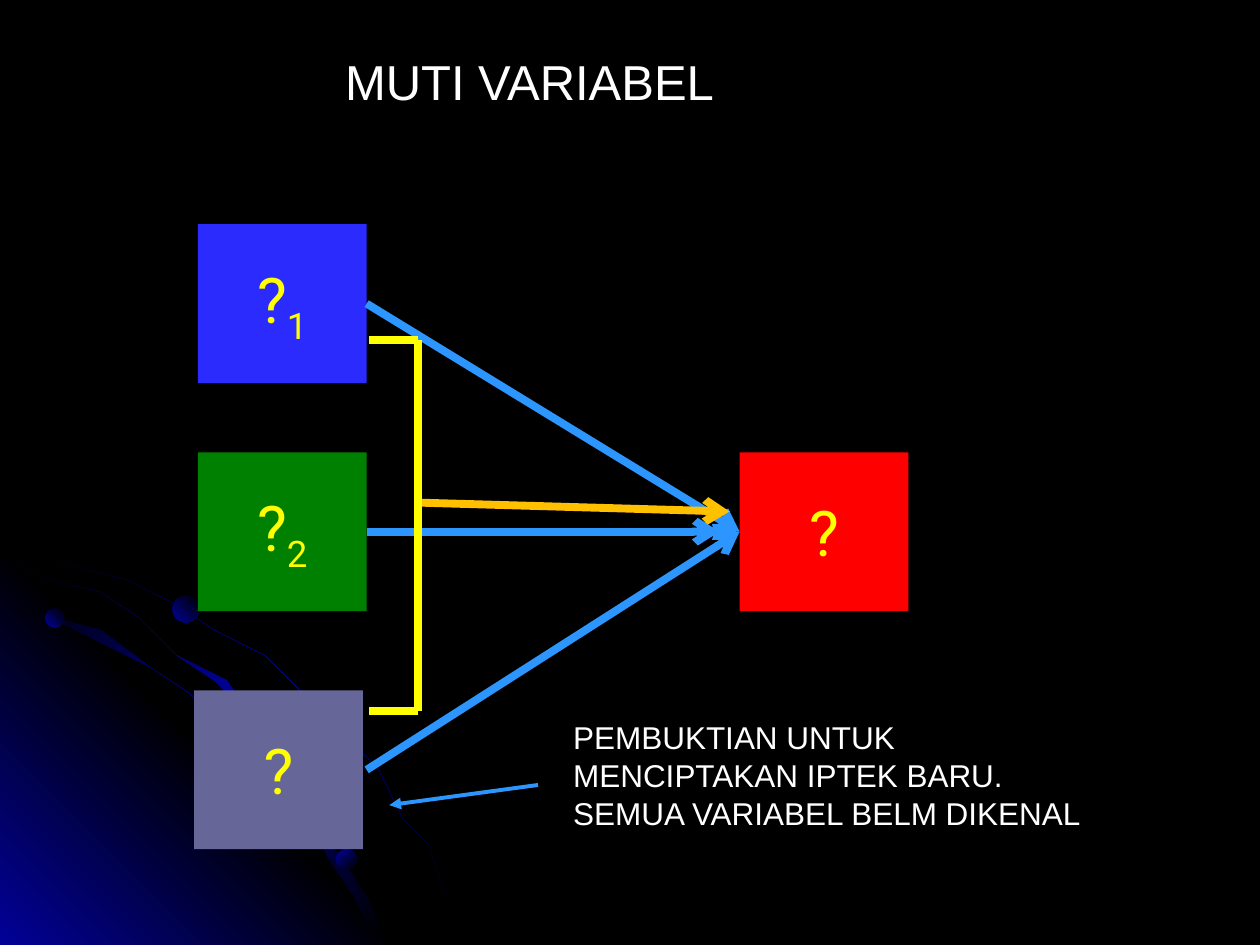
from dataclasses import dataclass

from lxml import etree
from pptx import Presentation, util as u
from pptx.dml.color import RGBColor
from pptx.enum import shapes, text
from pptx.oxml import ns

COLUMNS, ROWS = 100, 75
CELL = u.Inches(0.1)


@dataclass(frozen=True)
class Theme:
    """Colours, fonts and sizes of the slide."""
    night: str = "000000"
    glow: str = "010199"
    first: str = "2B2BFE"
    second: str = "008000"
    other: str = "666699"
    outcome: str = "FF0000"
    effect: str = "2D96FE"
    joint: str = "FFC000"
    mark: str = "FFFF00"
    words: str = "FFFFFF"
    mark_font: str = "Roboto"
    words_font: str = "Arial"
    mark_size: int = 36
    title_size: int = 28
    note_size: int = 18
    thick: float = 4.5
    thin: float = 2.25


THEME = Theme()
BOX_WIDTH, BOX_HEIGHT = 13.4, 12.6

ORBITS = [
    [(0, 43.5), (2.8, 44.1), (5.7, 44.7), (9.8, 45.9), (13.6, 47.7),
     (17.4, 49.7), (20.9, 52.1), (24.2, 54.8), (27.2, 57.8), (30, 61.1),
     (32.5, 64.8), (33.9, 67.3), (35.2, 69.8), (36.2, 72.3), (37.2, 74.9)],
    [(0, 47.5), (4.1, 48.8), (7.9, 50.5), (11.7, 52.6), (15.2, 54.9),
     (18.4, 57.6), (21.5, 60.6), (24.2, 64), (26.6, 67.6), (28.6, 71.2),
     (29.6, 73), (30.3, 74.9)],
    [(0, 44.2), (3.9, 45.5), (7.6, 47.3), (11.1, 49.3), (14.4, 51.6),
     (17.5, 54.3), (20.4, 57.3), (22.9, 60.3), (25.4, 63.9), (26.9, 66.5),
     (28.2, 69.3), (29.4, 72), (30.3, 74.9)],
]


def cells(*counts):
    """Turn counts of grid cells into lengths."""
    return [u.Emu(round(count * CELL)) for count in counts]


def rgb(colour):
    """Read a colour of the theme."""
    return RGBColor.from_string(colour)


def blend(shape, colours, angle):
    """Fill an unlined shape with evenly spaced colours along an angle."""
    shape.shadow.inherit = False
    shape.line.fill.background()
    shape.fill.gradient()
    gradient = shape._element.spPr.find(ns.qn("a:gradFill"))
    for part in list(gradient):
        gradient.remove(part)
    stops = etree.SubElement(gradient, ns.qn("a:gsLst"))
    for index, colour in enumerate(colours):
        place = str(100000 * index // (len(colours) - 1))
        stop = etree.SubElement(stops, ns.qn("a:gs"), pos=place)
        etree.SubElement(stop, ns.qn("a:srgbClr"), val=colour)
    etree.SubElement(gradient, ns.qn("a:lin"), ang=str(angle * 60000), scaled="0")


def outline(slide, points):
    """Draw a closed outline through grid points."""
    builder = slide.shapes.build_freeform(*points[0], scale=CELL)
    builder.add_line_segments(points[1:], close=True)
    return builder.convert_to_shape()


def orbit(slide, outer, thickness=0.2):
    """Draw a thin band whose offset turns from downward to leftward."""
    last = len(outer) - 1
    inner = [(x - thickness * i / last, y + thickness * (1 - i / last))
             for i, (x, y) in enumerate(outer)]
    blend(outline(slide, outer + inner[::-1]),
          [THEME.night, THEME.glow, THEME.night], 45)


def planet(slide, left, top, size, angle):
    """Draw a small shaded ball."""
    ball = slide.shapes.add_shape(shapes.MSO_SHAPE.OVAL,
                                  *cells(left, top, size, size))
    blend(ball, [THEME.glow, THEME.night], angle)


def style(paragraph, font, size, colour):
    """Set the font of a whole paragraph."""
    paragraph.font.name = font
    paragraph.font.size = u.Pt(size)
    paragraph.font.color.rgb = rgb(colour)


def variable(slide, left, top, colour, index=""):
    """Draw a box for an unknown variable with an optional index."""
    box = slide.shapes.add_shape(shapes.MSO_SHAPE.RECTANGLE,
                                 *cells(left, top, BOX_WIDTH, BOX_HEIGHT))
    box.shadow.inherit = False
    box.fill.solid()
    box.fill.fore_color.rgb = rgb(colour)
    box.line.fill.background()
    frame = box.text_frame
    frame.word_wrap = False
    frame.vertical_anchor = text.MSO_ANCHOR.MIDDLE
    symbol = frame.paragraphs[0]
    symbol.alignment = text.PP_ALIGN.CENTER
    style(symbol, THEME.mark_font, THEME.mark_size, THEME.mark)
    symbol.add_run().text = "?"
    if index:
        subscript = symbol.add_run()
        subscript.text = index
        subscript._r.get_or_add_rPr().set("baseline", "-25000")


def link(slide, start, end, colour, width=THEME.thick, head=None):
    """Draw a straight line with an optional arrowhead at its end."""
    line = slide.shapes.add_connector(shapes.MSO_CONNECTOR.STRAIGHT,
                                      *cells(*start, *end))
    line.line.color.rgb = rgb(colour)
    line.line.width = u.Pt(width)
    if head:
        etree.SubElement(line.line._get_or_add_ln(), ns.qn("a:tailEnd"), type=head)
    etree.SubElement(line._element.spPr, ns.qn("a:effectLst"))


def caption(slide, area, words, size):
    """Write a wrapped line of text in a grid area."""
    frame = slide.shapes.add_textbox(*cells(*area)).text_frame
    frame.word_wrap = True
    frame.auto_size = text.MSO_AUTO_SIZE.SHAPE_TO_FIT_TEXT
    frame.text = words
    style(frame.paragraphs[0], THEME.words_font, size, THEME.words)


def backdrop(slide):
    """Paint the night sky with its glowing corner, orbits and planets."""
    slide.background.fill.solid()
    slide.background.fill.fore_color.rgb = rgb(THEME.night)
    orbit(slide, ORBITS[0])
    corner = outline(slide, [(0, 42.7), (32.2, 74.9), (0, 74.9)])
    blend(corner, [THEME.glow, THEME.night, THEME.glow], 315)
    for outer in ORBITS[1:]:
        orbit(slide, outer)
    planet(slide, 3.6, 48.3, 1.5, 315)
    planet(slide, 26.7, 67.4, 1.6, 45)
    planet(slide, 13.7, 47.3, 2.1, 315)


def diagram(slide):
    """Draw the variables, their single effects and their joint effect."""
    variable(slide, 15.7, 17.8, THEME.first, "1")
    variable(slide, 15.7, 35.9, THEME.second, "2")
    variable(slide, 15.4, 54.8, THEME.other)
    variable(slide, 58.7, 35.9, THEME.outcome)
    for row, tip in [(24.1, 58.7), (42.2, 57.1), (61.1, 58.7)]:
        link(slide, (29.1, row), (tip, 42.2), THEME.effect, head="arrow")
    spine, top, bottom = 33.2, 27, 56.4
    for row in (top, bottom):
        link(slide, (spine, row), (29.3, row), THEME.mark)
    link(slide, (spine, top), (spine, bottom), THEME.mark)
    link(slide, (33.5, 39.9), (57.9, 40.6), THEME.joint, head="arrow")


def main():
    """Build and save the slide."""
    deck = Presentation()
    deck.slide_width, deck.slide_height = cells(COLUMNS, ROWS)
    slide = deck.slides.add_slide(deck.slide_layouts[6])
    backdrop(slide)
    diagram(slide)
    caption(slide, (26.4, 3.6, 47.2, 5.7), "MUTI VARIABEL", THEME.title_size)
    caption(slide, (44.5, 56.5, 44.9, 10.1),
            "PEMBUKTIAN UNTUK MENCIPTAKAN IPTEK BARU. "
            "SEMUA VARIABEL BELM DIKENAL", THEME.note_size)
    link(slide, (42.7, 62.3), (30.9, 63.9), THEME.effect, THEME.thin, "triangle")
    deck.save("out.pptx")


if __name__ == "__main__":
    main()
